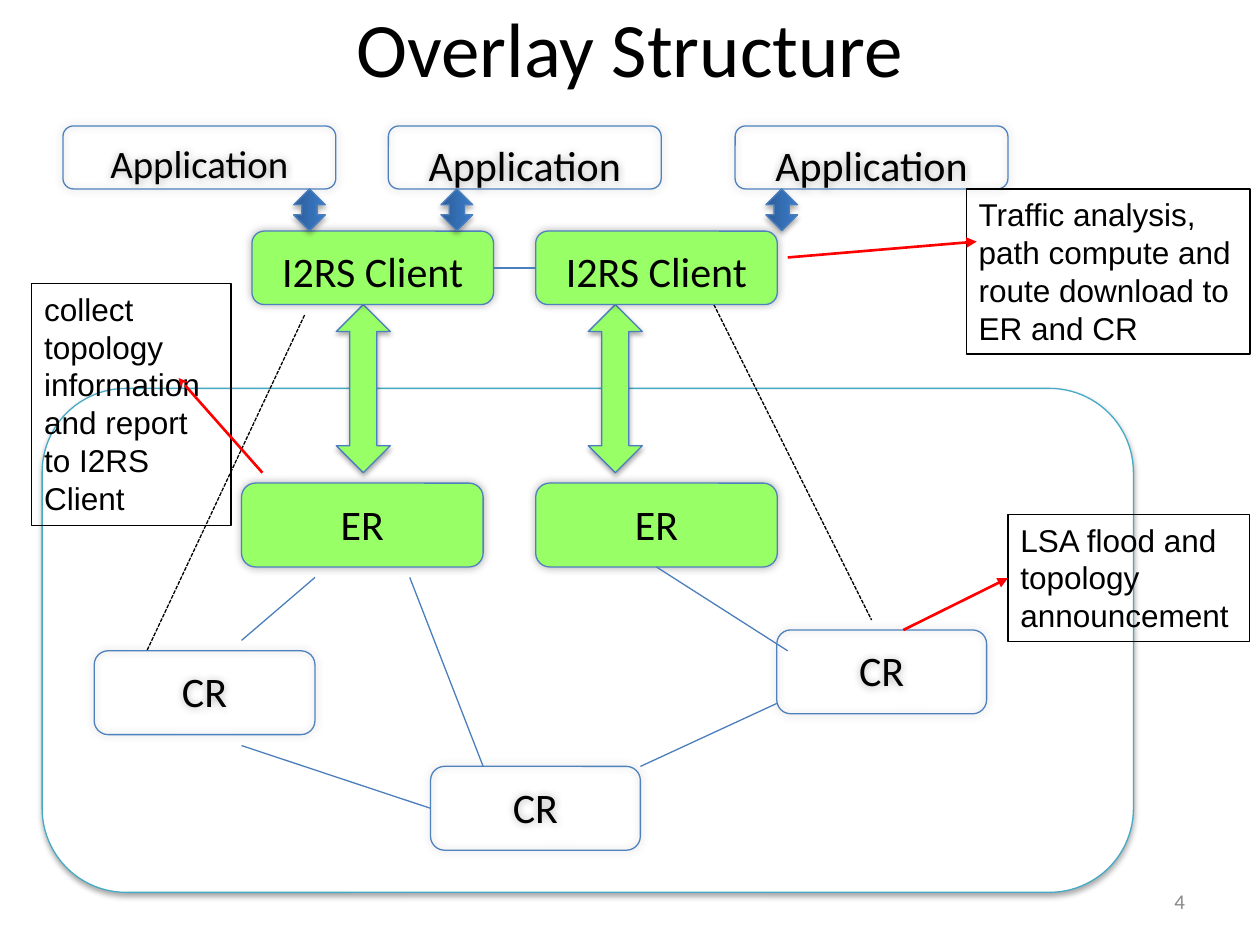
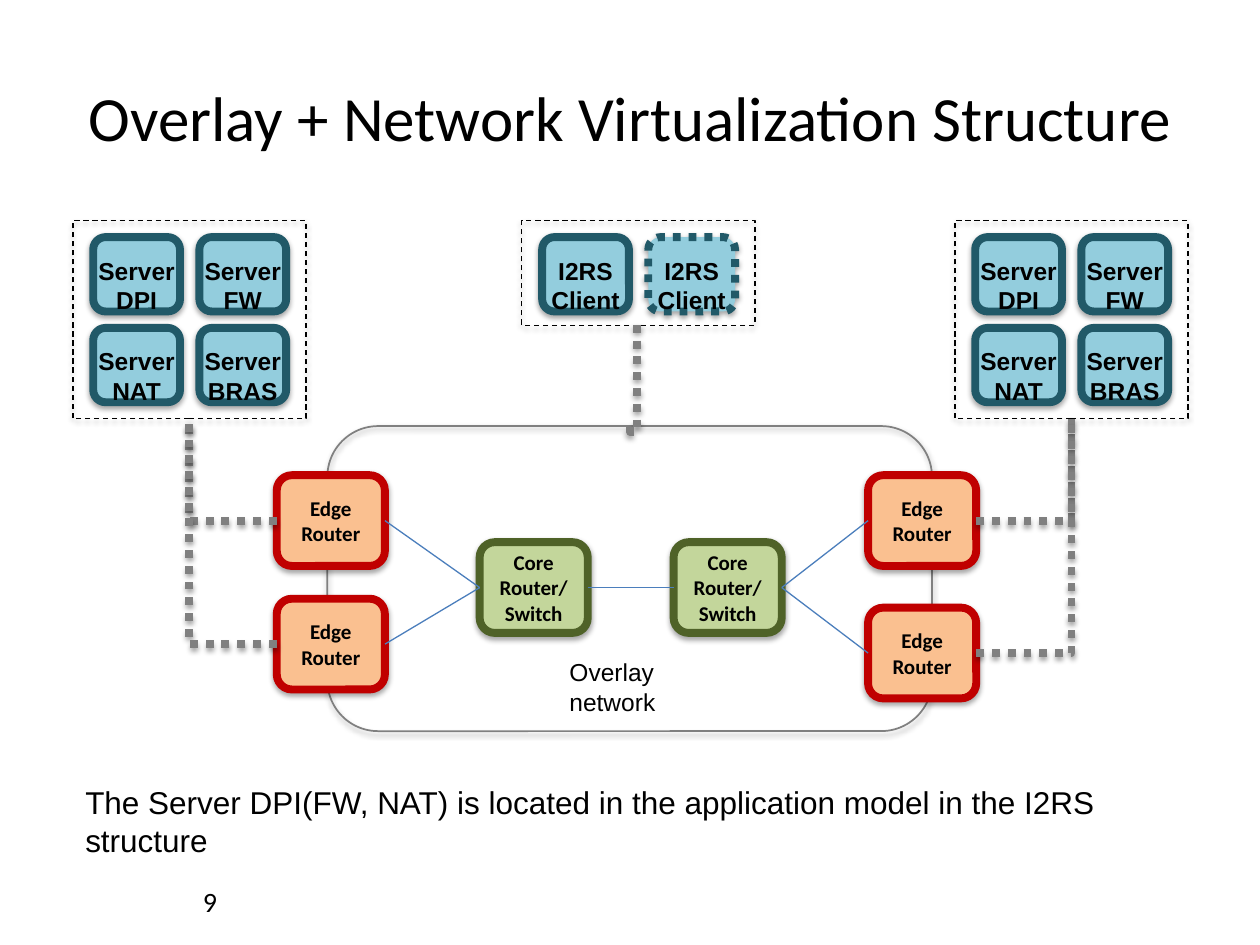
import pptx
import pptx.util
import pptx.dml.color
import pptx.enum.dml
import pptx.enum.shapes
import pptx.enum.text
import pptx.oxml
import pptx.oxml.ns

Cm = pptx.util.Cm
Pt = pptx.util.Pt
RGBColor = pptx.dml.color.RGBColor
Kind = pptx.enum.shapes.MSO_SHAPE
Link = pptx.enum.shapes.MSO_CONNECTOR
Dash = pptx.enum.dml.MSO_LINE
Align = pptx.enum.text.PP_ALIGN
Anchor = pptx.enum.text.MSO_ANCHOR
Fit = pptx.enum.text.MSO_AUTO_SIZE

BLACK = RGBColor(0, 0, 0)
WHITE = RGBColor(255, 255, 255)
GRAY = RGBColor(0x80, 0x80, 0x80)
PALE = RGBColor(0x89, 0x89, 0x89)
RED = RGBColor(255, 0, 0)
LIME = RGBColor(0x99, 0xFF, 0x66)
BLUE = RGBColor(0x4F, 0x81, 0xBD)
WIRE = RGBColor(0x4B, 0x7E, 0xBC)
AQUA = RGBColor(0x46, 0xAA, 0xC5)
LIGHT = RGBColor(0x3A, 0x7C, 0xCB)
DEEP = RGBColor(0x2C, 0x5D, 0x98)
SKY = RGBColor(0x93, 0xCD, 0xDD)
TEAL = RGBColor(0x21, 0x59, 0x68)
LEAF = RGBColor(0xC3, 0xD6, 0x9B)
MOSS = RGBColor(0x4F, 0x62, 0x28)
PEACH = RGBColor(0xFA, 0xC0, 0x90)
BRICK = RGBColor(0xC0, 0, 0)

DROP = (3.1, 1.8, 35)
GLOW = (5, 0, 30)
TOP, LEFT, BOTTOM, RIGHT = range(4)


def put(item, **values):
    for name, value in values.items():
        setattr(item, name, value)


def node(tag, **attrs):
    item = pptx.oxml.parse_xml(f"<a:{tag} {pptx.oxml.ns.nsdecls('a')}/>")
    for name, value in attrs.items():
        item.set(name, str(value))
    return item


def shade(effects, look):
    blur, dist, alpha = look
    drop = node("outerShdw", blurRad=Pt(blur), dist=Pt(dist), dir=5400000,
                algn="ctr", rotWithShape=0)
    tint = node("srgbClr", val="000000")
    tint.append(node("alpha", val=alpha * 1000))
    drop.append(tint)
    effects.append(drop)


def place(shape, box):
    put(shape, **dict(zip(("left", "top", "width", "height"), map(Cm, box))))


def inner(box, x, y, w, h):
    return box[0] + x, box[1] + y, w, h


def paint(shape, fill=None, line=None, width=0.75, dash=None, shadow=None):
    if fill is None:
        shape.fill.background()
    else:
        shape.fill.solid()
        shape.fill.fore_color.rgb = fill
    if line is None:
        shape.line.fill.background()
    else:
        shape.line.color.rgb = line
        put(shape.line, width=Pt(width), dash_style=dash)
    shape.shadow.inherit = False
    if shadow:
        shade(shape._element.spPr.find(pptx.oxml.ns.qn("a:effectLst")), shadow)


def draw(slide, kind, box, **look):
    shape = slide.shapes.add_shape(kind, *map(Cm, box))
    paint(shape, **look)
    return shape


def write(shape, text, size, align=Align.CENTER, face="Calibri", bold=False,
          color=BLACK, **frame):
    body = shape.text_frame
    put(body, **{"word_wrap": True, "vertical_anchor": Anchor.TOP, **frame})
    body.text = text
    for para in body.paragraphs:
        put(para, alignment=align, space_before=Pt(0))
        for run in para.runs:
            put(run.font, size=Pt(size), name=face, bold=bold)
            run.font.color.rgb = color


def label(slide, box, text, size, **look):
    shape = slide.shapes.add_textbox(*map(Cm, box))
    write(shape, text, size, **look)


def wire(slide, start, end, color=WIRE, width=0.75, dash=None, head=None,
         kind=Link.STRAIGHT, shadow=None):
    joined = [hasattr(spot[0], "left") for spot in (start, end)]
    points = [(0, 0) if held else spot
              for held, spot in zip(joined, (start, end))]
    line = slide.shapes.add_connector(kind, *(Cm(v) for p in points for v in p))
    if joined[0]:
        line.begin_connect(*start)
    if joined[1]:
        line.end_connect(*end)
    line.line.color.rgb = color
    put(line.line, width=Pt(width), dash_style=dash)
    if head:
        line.line._get_or_add_ln().append(node("tailEnd", type=head))
    effects = node("effectLst")
    line._element.spPr.append(effects)
    if shadow:
        shade(effects, shadow)
    return line


def begin(deck, layout, title, box, big, page, spot, **look):
    slide = deck.slides.add_slide(deck.slide_layouts[layout])
    place(slide.shapes.title, box)
    write(slide.shapes.title, title, big, vertical_anchor=Anchor.MIDDLE,
          auto_size=Fit.NONE)
    label(slide, spot, page, vertical_anchor=Anchor.MIDDLE, **look)
    return slide


def block(slide, box, text, fill=None):
    shape = draw(slide, Kind.ROUNDED_RECTANGLE, box, fill=fill, line=BLUE,
                 shadow=GLOW)
    write(shape, text, 24, margin_top=Cm(0.22))
    return shape


def apps(slide, box):
    first = slide.placeholders[1]
    place(first, inner(box, 0, 0, 5.5, 1.27))
    shape = node("prstGeom", prst="roundRect")
    shape.append(node("avLst"))
    first._element.spPr.append(shape)
    paint(first, line=BLUE, shadow=GLOW)
    write(first, "Application", 22.2, margin_top=Cm(0.22), auto_size=Fit.NONE)
    props = first.text_frame.paragraphs[0]._p.get_or_add_pPr()
    for name in ("marL", "indent"):
        props.set(name, "0")
    props.append(node("buNone"))
    for x in (6.56, 13.55):
        block(slide, inner(box, x, 0, 5.5, 1.27), "Application")
    pair = [block(slide, inner(box, x, 2.12, 4.87, 1.48), "I2RS Client", LIME)
            for x in (3.81, 9.53)]
    wire(slide, (pair[0], RIGHT), (pair[1], LEFT))
    for x in (4.65, 7.62, 14.17):
        arrow = draw(slide, Kind.UP_DOWN_ARROW, inner(box, x, 1.27, 0.64, 0.84),
                     line=WIRE, shadow=DROP)
        arrow.adjustments[0], arrow.adjustments[1] = 0.175, 0.48
        arrow.fill.gradient()
        arrow.fill.gradient_angle = 180
        for stop, color in zip(arrow.fill.gradient_stops, (LIGHT, DEEP)):
            stop.color.rgb = color


def net(slide, box):
    draw(slide, Kind.ROUNDED_RECTANGLE, box, fill=WHITE, line=AQUA, shadow=DROP)
    for x in (5.93, 11.01):
        draw(slide, Kind.UP_DOWN_ARROW, inner(box, x, -1.69, 1.09, 3.39),
             fill=LIME, line=WIRE, shadow=DROP)
    edges = [block(slide, inner(box, x, 1.91, 4.87, 1.69), "ER", LIME)
             for x in (4.02, 9.95)]
    cores = [block(slide, inner(box, x, y, w, 1.69), "CR")
             for x, y, w in ((1.05, 5.29, 4.45), (7.83, 7.62, 4.23),
                             (14.81, 4.87, 4.23))]

    def at(x, y):
        return box[0] + x, box[1] + y

    for start, end in ((at(5.5, 3.81), at(4.02, 5.08)),
                       (at(7.41, 3.81), at(8.89, 7.62)),
                       (at(14.81, 6.35), at(12.06, 7.62)),
                       ((edges[1], BOTTOM), at(15.03, 5.29)),
                       (at(4.02, 7.2), (cores[1], LEFT))):
        wire(slide, start, end)
    for start, end in ((at(5.29, -1.48), at(2.11, 5.29)),
                       (at(13.54, -1.69), at(16.72, 4.67))):
        wire(slide, start, end, color=BLACK, dash=Dash.SQUARE_DOT)


def note(slide, box, text, start, end=None, head="triangle"):
    shape = draw(slide, Kind.RECTANGLE, box, line=BLACK)
    write(shape, text, 18, align=Align.LEFT, face="Arial")
    wire(slide, start, end or (shape, LEFT), color=RED, width=1.5, head=head)


def group(slide, box, names, dots=()):
    frame = draw(slide, Kind.RECTANGLE, box, line=BLACK, dash=Dash.DASH,
                 shadow=DROP)
    for i, name in enumerate(names):
        row, col = divmod(i, 2)
        cell = draw(slide, Kind.ROUNDED_RECTANGLE,
                    inner(box, 0.41 + 2.14 * col, 0.33 + 1.83 * row, 1.75, 1.5),
                    fill=SKY, line=TEAL, width=4.5, shadow=DROP,
                    dash=Dash.ROUND_DOT if i in dots else None)
        write(cell, name, 14, face="Arial", bold=True, word_wrap=False,
              margin_top=Cm(0.3), margin_left=0, margin_right=0)
    return frame


def router(slide, box, x, y, text, fill, line):
    shape = draw(slide, Kind.ROUNDED_RECTANGLE, inner(box, x, y, 2.18, 1.83),
                 fill=fill, line=line, width=4.5, shadow=DROP)
    write(shape, text, 12, bold=True, vertical_anchor=Anchor.MIDDLE)
    return shape


def cloud(slide, box):
    draw(slide, Kind.ROUNDED_RECTANGLE, box, line=GRAY, width=1, shadow=DROP)
    name = draw(slide, Kind.RECTANGLE, inner(box, 4.63, 4.54, 2.82, 1.45),
                fill=WHITE)
    write(name, "Overlay network", 14, align=Align.LEFT, face="Arial")
    cores = [router(slide, box, x, 2.34, text, LEAF, MOSS)
             for x, text in ((3.07, "Core\nRouter/Switch"),
                             (6.98, "Core Router/Switch"))]
    sides = [[router(slide, box, x, y, "Edge Router", PEACH, BRICK)
              for y in (0.99, low)] for x, low in ((-1.02, 3.48), (10.9, 3.66))]
    wire(slide, (cores[0], RIGHT), (cores[1], LEFT))
    for core, side, out in zip(cores, sides, (LEFT, RIGHT)):
        for edge in side:
            wire(slide, (core, out), (edge, RIGHT if out == LEFT else LEFT))
    return sides


def overlay(deck):
    slide = begin(deck, 1, "Overlay Structure", (1.27, 0, 22.86, 1.9), 44,
                  "4", (18.21, 17.65, 5.93, 1.02), size=12, align=Align.RIGHT,
                  color=PALE)
    net(slide, (0.85, 7.83, 22, 10.16))
    apps(slide, (1.27, 2.54, 19.05, 3.6))
    note(slide, (19.48, 3.81, 5.72, 3.33),
         "Traffic analysis, path compute and route download to ER and CR",
         (15.88, 5.19), (19.69, 4.87))
    note(slide, (0.64, 5.72, 4.02, 4.87),
         "collect topology information and report to I2RS Client",
         (5.29, 9.53), (3.6, 7.62), "stealth")
    note(slide, (20.32, 10.37, 4.87, 2.57),
         "LSA flood and topology announcement", (18.21, 12.7))


def virtual(deck):
    slide = begin(deck, 5, "Overlay + Network Virtualization Structure",
                  (1.27, 0.76, 22.86, 3.18), 36, "9",
                  (1.27, 17.65, 5.93, 1.02), size=16)
    sides = cloud(slide, (6.6, 8.59, 12.19, 6.15))
    names = [f"Server\n{role}" for role in ("DPI", "FW", "NAT", "BRAS")]
    dots = {"color": GRAY, "width": 4.5, "dash": Dash.ROUND_DOT,
            "kind": Link.ELBOW, "shadow": DROP}
    for x, side, out in zip((1.47, 19.25), sides, (LEFT, RIGHT)):
        frame = group(slide, (x, 4.45, 4.7, 3.99), names)
        for edge in side:
            bend = wire(slide, (edge, out), (frame, BOTTOM), **dots)
            bend._element.spPr.prstGeom.set("prst", "bentConnector2")
    group(slide, (10.52, 4.45, 4.7, 2.11), ["I2RS\nClient"] * 2, dots=(1,))
    jog = wire(slide, (11.76, 7.49), (13.79, 7.64), **dots)
    form = jog._element.spPr
    form.xfrm.set("rot", "5400000")
    form.prstGeom.get_or_add_avLst().append(
        node("gd", name="adj1", fmla="val 106000"))
    label(slide, (1.47, 15.67, 23.29, 1.8),
          "The Server DPI(FW, NAT) is located in the application model "
          "in the I2RS structure", 18, align=Align.LEFT, face="Arial")


def main():
    deck = pptx.Presentation()
    put(deck, slide_width=Cm(25.4), slide_height=Cm(19.05))
    overlay(deck)
    virtual(deck)
    deck.save("out.pptx")


if __name__ == "__main__":
    main()
